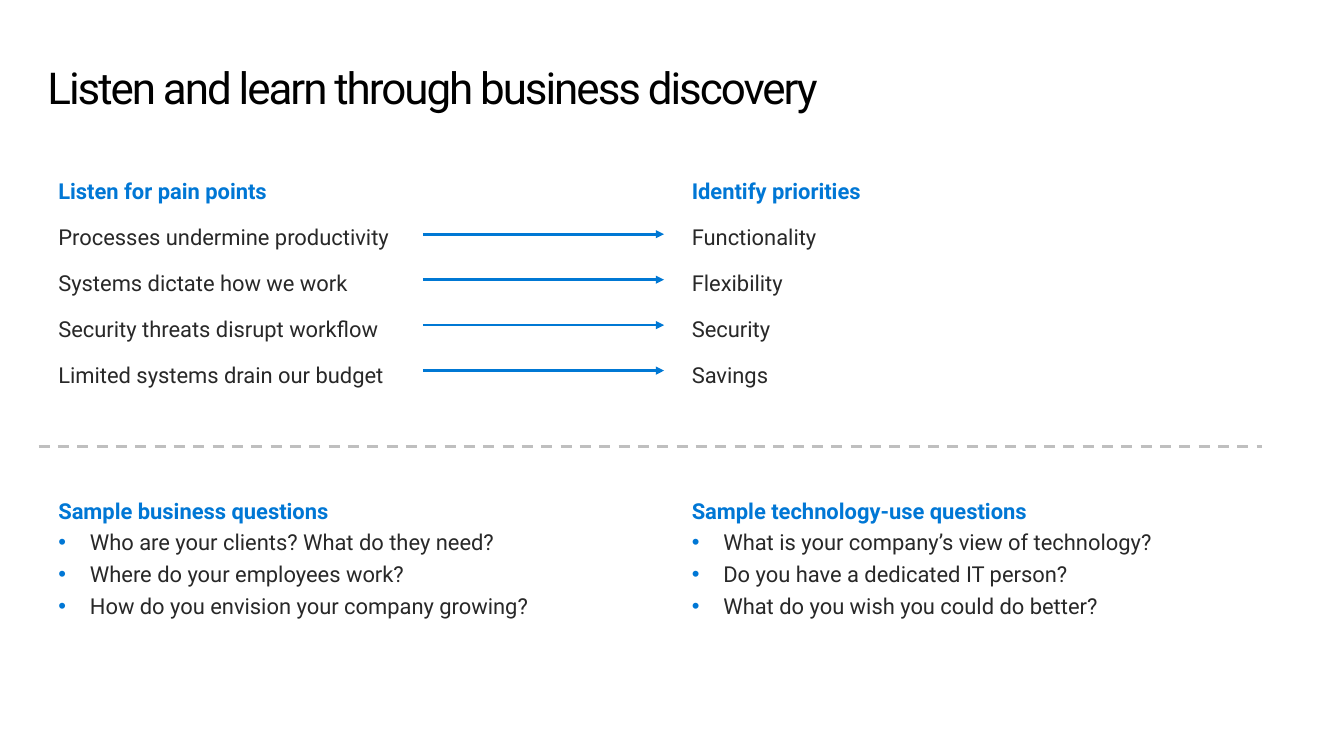
from lxml.etree import SubElement
from pptx import Presentation
from pptx.dml.color import RGBColor
from pptx.enum.dml import MSO_LINE
from pptx.enum.shapes import MSO_CONNECTOR
from pptx.enum.text import MSO_ANCHOR, MSO_AUTO_SIZE, PP_ALIGN
from pptx.oxml.ns import qn
from pptx.util import Pt

PX = 9144
FONT = "Roboto"
ACCENT, INK, BLACK = "0077D5", "282828", "000000"
ARROW_BLUE, DIVIDER_GRAY = "0078D4", "BFBFBF"
LEFT, RIGHT = 39, 680
LIST_INDENT = 32
PRIORITY_SPACING = {"space_before": Pt(6.1), "space_after": Pt(8.2)}
QUESTION_SPACING = {"space_before": Pt(4.1), "space_after": Pt(0)}

LISTS = [
    (1, (LEFT, 164, 396, 253), PRIORITY_SPACING, False, "Listen for pain points", [
        "Processes undermine productivity",
        "Systems dictate how we work",
        "Security threats disrupt workflow",
        "Limited systems drain our budget",
    ]),
    (3, (RIGHT, 164, 396, 253), PRIORITY_SPACING, False, "Identify priorities", [
        "Functionality", "Flexibility", "Security", "Savings",
    ]),
    (2, (LEFT, 487, 532, 161), QUESTION_SPACING, True, "Sample business questions", [
        "Who are your clients? What do they need?",
        "Where do your employees work?",
        "How do you envision your company growing?",
    ]),
    (4, (RIGHT, 487, 532, 161), QUESTION_SPACING, True, "Sample technology-use questions", [
        "What is your company’s view of technology?",
        "Do you have a dedicated IT person?",
        "What do you wish you could do better?",
    ]),
]


def px(length):
    return length * PX


def color(hex_value):
    return RGBColor.from_string(hex_value)


def apply(target, values):
    for attribute, value in values.items():
        setattr(target, attribute, value)


def place(placeholder, bounds, insets, anchor):
    apply(placeholder, dict(zip(("left", "top", "width", "height"), map(px, bounds))))
    sides = ("margin_left", "margin_top", "margin_right", "margin_bottom")
    frame = placeholder.text_frame
    apply(frame, dict(zip(sides, map(px, insets))))
    apply(frame, {"word_wrap": True, "auto_size": MSO_AUTO_SIZE.NONE, "vertical_anchor": anchor})
    return frame


def write(paragraph, text, size, hex_value, bold=False):
    run = paragraph.add_run()
    run.text = text
    apply(run.font, {"name": FONT, "size": Pt(size), "bold": bold})
    run.font.color.rgb = color(hex_value)
    return run


def set_bullet(paragraph, bulleted):
    properties = paragraph._p.get_or_add_pPr()
    indent = px(LIST_INDENT) if bulleted else 0
    properties.set("marL", str(indent))
    properties.set("indent", str(-indent))
    if bulleted:
        bullet_color = SubElement(properties, qn("a:buClr"))
        SubElement(bullet_color, qn("a:srgbClr"), val=ACCENT)
        SubElement(properties, qn("a:buFont"), typeface="Arial")
        SubElement(properties, qn("a:buChar"), char="•")
    else:
        SubElement(properties, qn("a:buNone"))


def add_title(slide, text):
    frame = place(slide.shapes.title, (48, 49, 1265, 85), (0, 18, 0, 0), MSO_ANCHOR.MIDDLE)
    frame.margin_top, frame.margin_right = 0, px(18)
    heading = frame.paragraphs[0]
    apply(heading, {"alignment": PP_ALIGN.LEFT, "line_spacing": 0.9})
    run = write(heading, text, 32, BLACK)
    run.font._element.set("spc", "-150")


def add_list(slide, index, bounds, spacing, bulleted, heading, items):
    frame = place(slide.placeholders[index], bounds, (20, 16, 20, 16), MSO_ANCHOR.TOP)
    for row, text in enumerate([heading, *items]):
        is_heading = row == 0
        paragraph = frame.paragraphs[0] if is_heading else frame.add_paragraph()
        set_bullet(paragraph, bulleted and not is_heading)
        apply(paragraph, {"alignment": PP_ALIGN.LEFT, "line_spacing": 1.0, **spacing})
        if is_heading:
            paragraph.space_before = Pt(0)
        write(paragraph, text, 16, ACCENT if is_heading else INK, is_heading)


def add_rule(slide, start, end, y, hex_value):
    rule = slide.shapes.add_connector(MSO_CONNECTOR.STRAIGHT, px(start), px(y), px(end), px(y))
    rule.line.color.rgb = color(hex_value)
    rule.line.width = Pt(2)
    SubElement(rule._element.spPr, qn("a:effectLst"))
    return rule


def add_arrow(slide, start, end, y):
    arrow = add_rule(slide, start, end, y, ARROW_BLUE)
    SubElement(arrow.line._get_or_add_ln(), qn("a:tailEnd"), type="triangle")


def main():
    deck = Presentation()
    apply(deck, {"slide_width": px(1360), "slide_height": px(765)})
    slide = deck.slides.add_slide(deck.slide_layouts.get_by_name("Comparison"))
    add_title(slide, "Listen and learn through business discovery")
    divider = add_rule(slide, 39, 1277, 452, DIVIDER_GRAY)
    divider.line.dash_style = MSO_LINE.DASH
    for discovery_list in LISTS:
        add_list(slide, *discovery_list)
    for row in range(4):
        add_arrow(slide, 428, 672, 237 + 46 * row)
    deck.save("out.pptx")


if __name__ == "__main__":
    main()
